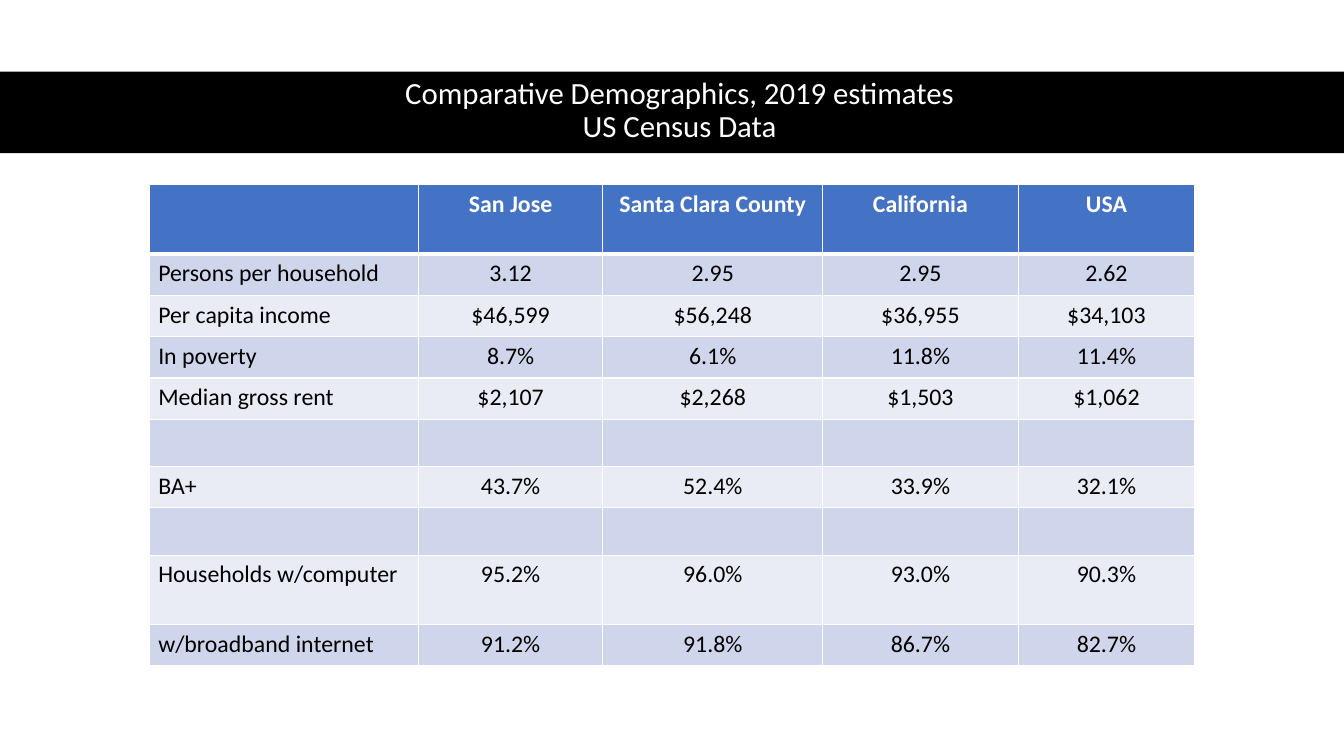
from lxml import etree
from pptx import Presentation
from pptx import util as u
from pptx.dml.color import RGBColor
from pptx.enum import shapes, text
from pptx.oxml.ns import qn

COLORS = {
    "black": "000000",
    "white": "FFFFFF",
    "header": "4472C4",
    "band_dark": "CFD5EA",
    "band_light": "E9EBF5",
}
FONT = "Calibri"
TITLE = "Comparative Demographics, 2019 estimates\vUS Census Data"
COLUMN_WIDTHS = [2.67, 1.83, 2.18, 1.94, 1.75]
ROW_HEIGHT, GAP_HEIGHT, TALL_HEIGHT = 0.41, 0.47, 0.69
EMPTY_ROW = [""] * len(COLUMN_WIDTHS)
ROWS = [
    (TALL_HEIGHT, ["", "San Jose", "Santa Clara County", "California", "USA"]),
    (ROW_HEIGHT, ["Persons per household", "3.12", "2.95", "2.95", "2.62"]),
    (ROW_HEIGHT, ["Per capita income", "$46,599", "$56,248", "$36,955", "$34,103"]),
    (ROW_HEIGHT, ["In poverty", "8.7%", "6.1%", "11.8%", "11.4%"]),
    (ROW_HEIGHT, ["Median gross rent", "$2,107", "$2,268", "$1,503", "$1,062"]),
    (GAP_HEIGHT, EMPTY_ROW),
    (ROW_HEIGHT, ["BA+", "43.7%", "52.4%", "33.9%", "32.1%"]),
    (GAP_HEIGHT, EMPTY_ROW),
    (TALL_HEIGHT, ["Households w/computer", "95.2%", "96.0%", "93.0%", "90.3%"]),
    (ROW_HEIGHT, ["w/broadband internet", "91.2%", "91.8%", "86.7%", "82.7%"]),
]


def rgb(name):
    return RGBColor.from_string(COLORS[name])


def apply_format(target, values):
    for name, value in values.items():
        setattr(target, name, value)


def write_paragraph(paragraph, content, alignment, size, color, bold=False):
    paragraph.text = content
    paragraph.alignment = alignment
    for run in paragraph.runs:
        apply_format(run.font, {"name": FONT, "size": u.Pt(size), "bold": bold})
        run.font.color.rgb = rgb(color)


def add_band(slide, left, top, width, height):
    band = slide.shapes.add_shape(
        shapes.MSO_SHAPE.RECTANGLE, *map(u.Inches, (left, top, width, height)))
    band.shadow.inherit = False
    band.fill.solid()
    band.fill.fore_color.rgb = rgb("black")
    band.line.fill.background()


def add_title(slide, left, top, width, height):
    box = slide.shapes.add_textbox(*map(u.Inches, (left, top, width, height)))
    apply_format(box.text_frame, {
        "word_wrap": True,
        "vertical_anchor": text.MSO_ANCHOR.MIDDLE,
    })
    paragraph = box.text_frame.paragraphs[0]
    write_paragraph(paragraph, TITLE, text.PP_ALIGN.CENTER, 22, "white")
    paragraph.line_spacing = 0.9


def set_borders(cell, widths):
    """Draw white cell borders; widths maps L, R, T and B to points."""
    properties = cell._tc.get_or_add_tcPr()
    for side, width in widths.items():
        line = etree.SubElement(properties, qn(f"a:ln{side}"), w=str(u.Pt(width)))
        fill = etree.SubElement(line, qn("a:solidFill"))
        etree.SubElement(fill, qn("a:srgbClr"), val=COLORS["white"])


def format_cell(cell, content, row, column):
    is_header = row == 0
    set_borders(cell, {
        "L": 1,
        "R": 1,
        "T": 3 if row == 1 else 1,
        "B": 3 if is_header else 1,
    })
    band = "band_dark" if row % 2 else "band_light"
    cell.fill.solid()
    cell.fill.fore_color.rgb = rgb("header" if is_header else band)
    apply_format(cell, {
        "margin_left": u.Inches(0.09),
        "margin_right": u.Inches(0.09),
        "margin_top": u.Inches(0.05),
        "margin_bottom": u.Inches(0.05),
    })
    if content:
        write_paragraph(
            cell.text_frame.paragraphs[0], content,
            text.PP_ALIGN.CENTER if column else text.PP_ALIGN.LEFT,
            17, "white" if is_header else "black", is_header)


def add_demographics_table(slide, left, top):
    width = sum(COLUMN_WIDTHS)
    height = sum(row_height for row_height, _ in ROWS)
    table = slide.shapes.add_table(
        len(ROWS), len(COLUMN_WIDTHS),
        *map(u.Inches, (left, top, width, height))).table
    for column, column_width in zip(table.columns, COLUMN_WIDTHS):
        column.width = u.Inches(column_width)
    for row, (row_height, contents) in enumerate(ROWS):
        table.rows[row].height = u.Inches(row_height)
        for column, content in enumerate(contents):
            format_cell(table.cell(row, column), content, row, column)


def main():
    presentation = Presentation()
    presentation.slide_width = u.Inches(13.33)
    presentation.slide_height = u.Inches(7.5)
    slide = presentation.slides.add_slide(presentation.slide_layouts[6])
    add_band(slide, 0, 0.71, 13.33, 0.81)
    add_title(slide, 0.61, 0.7, 12.26, 0.81)
    add_demographics_table(slide, 1.48, 1.83)
    presentation.save("out.pptx")


if __name__ == "__main__":
    main()
